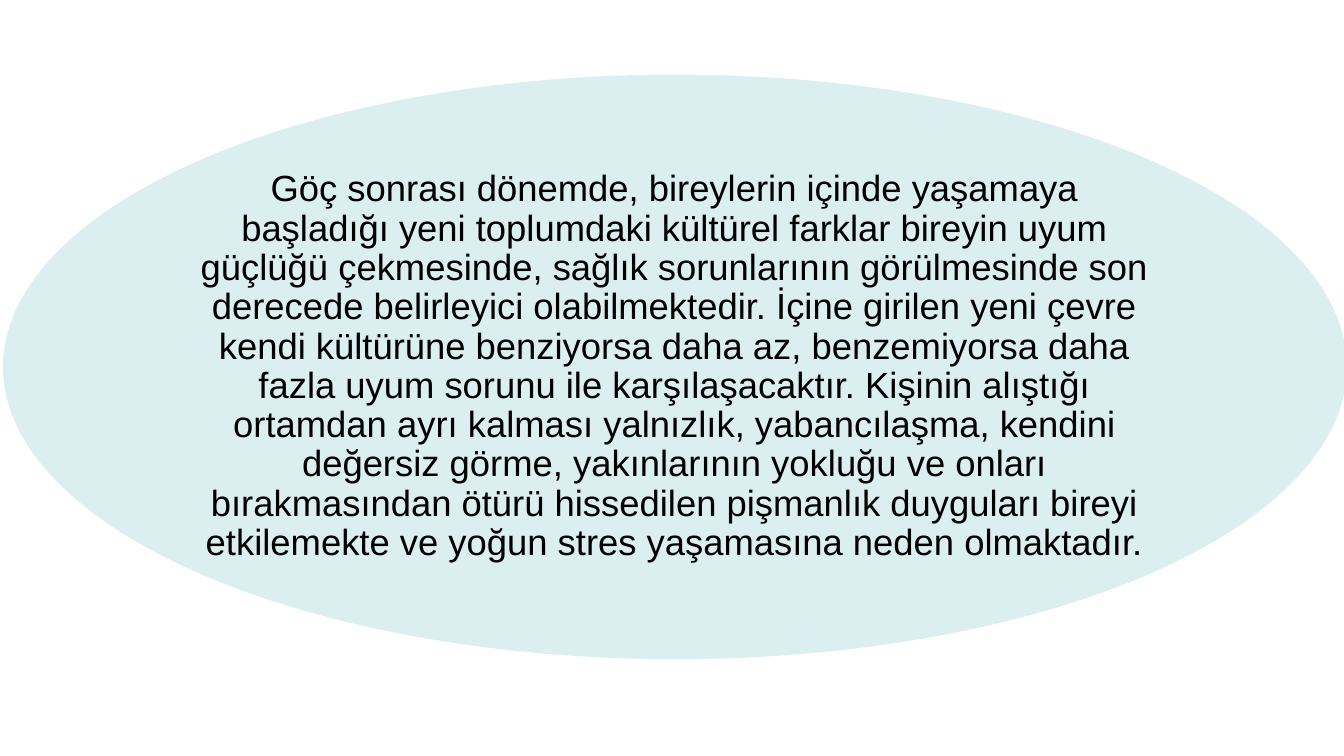
from dataclasses import dataclass

import lxml.etree
import pptx
import pptx.dml.color
import pptx.enum.shapes
import pptx.enum.text
import pptx.oxml.ns
import pptx.util

PALE_TEAL = pptx.dml.color.RGBColor(0xBB, 0xE0, 0xE3)
BLACK = pptx.dml.color.RGBColor(0x00, 0x00, 0x00)
MIGRATION_TEXT = (
    "Göç sonrası dönemde, bireylerin içinde yaşamaya başladığı yeni toplumdaki "
    "kültürel farklar bireyin uyum güçlüğü çekmesinde, sağlık sorunlarının "
    "görülmesinde son derecede belirleyici olabilmektedir. İçine girilen yeni "
    "çevre kendi kültürüne benziyorsa daha az, benzemiyorsa daha fazla uyum "
    "sorunu ile karşılaşacaktır. Kişinin alıştığı ortamdan ayrı kalması "
    "yalnızlık, yabancılaşma, kendini değersiz görme, yakınlarının yokluğu ve "
    "onları bırakmasından ötürü hissedilen pişmanlık duyguları bireyi "
    "etkilemekte ve yoğun stres yaşamasına neden olmaktadır."
)


@dataclass(frozen=True)
class Box:
    left: float
    top: float
    width: float
    height: float

    def lengths(self) -> tuple[pptx.util.Length, ...]:
        return tuple(
            pptx.util.Inches(value)
            for value in (self.left, self.top, self.width, self.height)
        )


ELLIPSE_BOX = Box(0.03, 0.74, 13.33, 5.8)
TEXT_BOX = Box(1.98, 1.59, 9.43, 4.1)


def add_ellipse(slide: pptx.slide.Slide, box: Box) -> None:
    shape = slide.shapes.add_shape(
        pptx.enum.shapes.MSO_SHAPE.OVAL, *box.lengths()
    )
    shape.shadow.inherit = False
    shape.line.fill.background()
    shape.fill.solid()
    shape.fill.fore_color.rgb = PALE_TEAL
    color = shape.fill._xPr.find(".//" + pptx.oxml.ns.qn("a:srgbClr"))
    lxml.etree.SubElement(color, pptx.oxml.ns.qn("a:alpha"), val="50000")


def add_text(slide: pptx.slide.Slide, box: Box, text: str) -> None:
    frame = slide.shapes.add_textbox(*box.lengths()).text_frame
    frame.word_wrap = True
    frame.vertical_anchor = pptx.enum.text.MSO_ANCHOR.MIDDLE
    frame.margin_left = frame.margin_right = pptx.util.Inches(0)
    frame.margin_top = frame.margin_bottom = pptx.util.Inches(0)
    paragraph = frame.paragraphs[0]
    paragraph.text = text
    paragraph.alignment = pptx.enum.text.PP_ALIGN.CENTER
    paragraph.line_spacing = 0.9
    paragraph.font.name = "Arial"
    paragraph.font.size = pptx.util.Pt(26)
    paragraph.font.color.rgb = BLACK


def main() -> None:
    presentation = pptx.Presentation()
    presentation.slide_width = pptx.util.Inches(13.33)
    presentation.slide_height = pptx.util.Inches(7.5)
    slide = presentation.slides.add_slide(presentation.slide_layouts[6])
    add_ellipse(slide, ELLIPSE_BOX)
    add_text(slide, TEXT_BOX, MIGRATION_TEXT)
    presentation.save("out.pptx")


if __name__ == "__main__":
    main()
